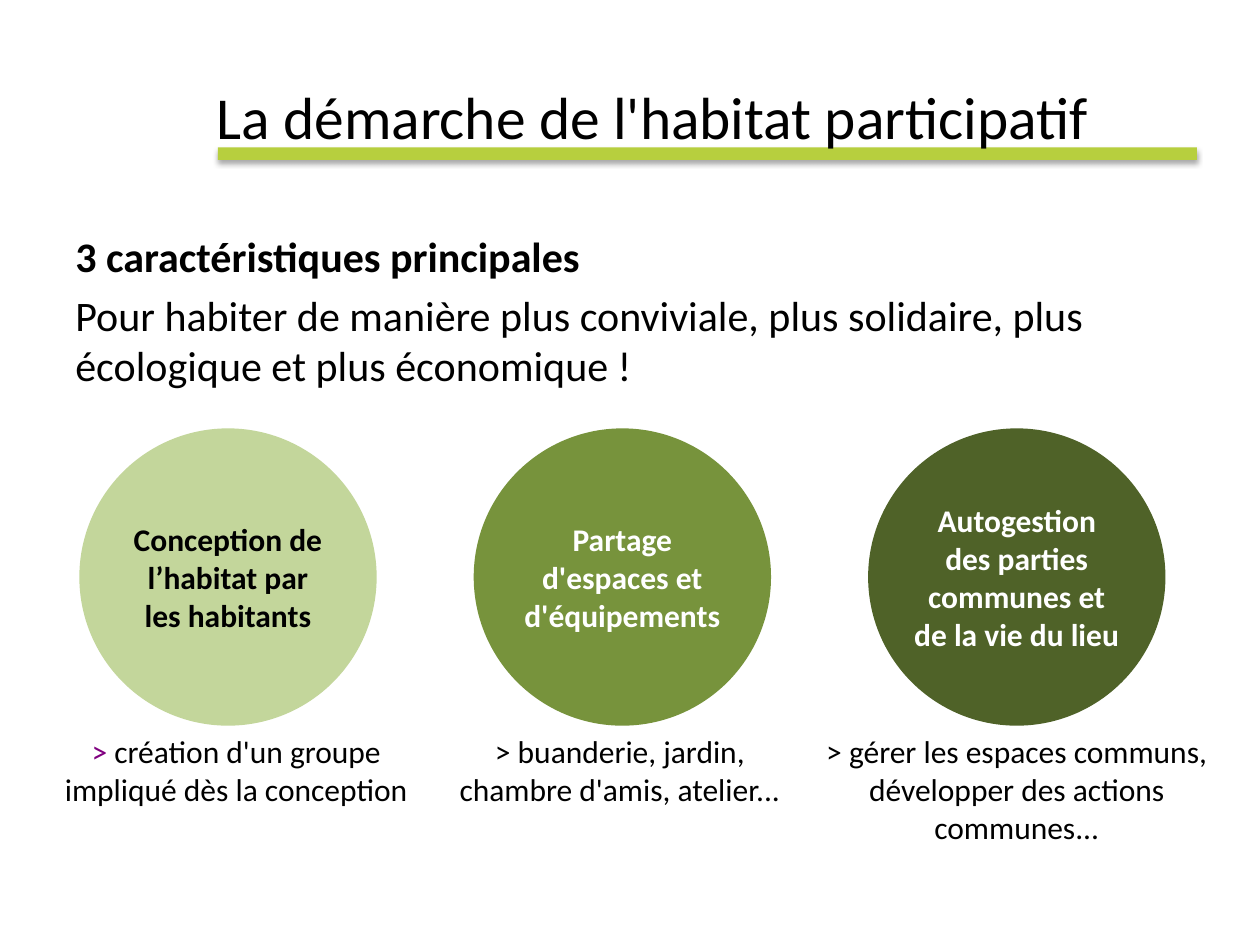
from lxml import etree
from pptx import Presentation
from pptx.dml.color import RGBColor
from pptx.enum.shapes import MSO_SHAPE
from pptx.enum.text import MSO_ANCHOR, PP_ALIGN
from pptx.oxml.ns import qn
from pptx.util import Inches, Pt

FONT = "Calibri"
BLACK, WHITE, PURPLE = "000000", "FFFFFF", "800080"
CIRCLE_LEFT, CIRCLE_TOP, CIRCLE_SIZE, CIRCLE_STEP = 0.63, 3.4, 2.36, 3.13

# circle text, fill, text colour, inset
CIRCLES = [
    ("Conception de l’habitat par les habitants", "C3D69B", BLACK, 0.04),
    ("Partage d'espaces et d'équipements", "77933C", WHITE, 0.04),
    ("Autogestion des parties communes et de la vie du lieu", "4F6228", WHITE, 0),
]
# caption text, colour of its mark, left, width, height
CAPTIONS = [
    ("création d'un groupe impliqué dès la conception", PURPLE, 0.18, 3.39, 0.71),
    ("buanderie, jardin, chambre d'amis, atelier...", BLACK, 3.54, 2.76, 0.71),
    ("gérer les espaces communs, développer des actions communes...", BLACK, 6.34, 3.46, 1.01),
]


def rgb(value):
    return RGBColor.from_string(value)


def style(r, size, color=BLACK, bold=False):
    r.font.name = FONT
    r.font.size = Pt(size)
    r.font.bold = bold
    r.font.color.rgb = rgb(color)


def add_shape(s, kind, left, top, width, height, fill):
    sp = s.shapes.add_shape(kind, Inches(left), Inches(top), Inches(width), Inches(height))
    sp.shadow.inherit = False
    sp.fill.solid()
    sp.fill.fore_color.rgb = rgb(fill)
    sp.line.fill.background()
    return sp


def add_drop_shadow(sp):
    effects = sp._element.spPr.find(qn("a:effectLst"))
    shadow = etree.SubElement(effects, qn("a:outerShdw"), blurRad=str(Pt(3.1)),
                              dist=str(Pt(1.8)), dir="5400000", rotWithShape="0")
    color = etree.SubElement(shadow, qn("a:srgbClr"), val=BLACK)
    etree.SubElement(color, qn("a:alpha"), val="35000")


def add_text(s, left, top, width, height, anchor=MSO_ANCHOR.TOP):
    tf = s.shapes.add_textbox(Inches(left), Inches(top), Inches(width), Inches(height)).text_frame
    tf.word_wrap = True
    tf.vertical_anchor = anchor
    return tf


def add_circle(s, left, text, fill, color, inset):
    sp = add_shape(s, MSO_SHAPE.OVAL, left, CIRCLE_TOP, CIRCLE_SIZE, CIRCLE_SIZE, fill)
    tf = sp.text_frame
    tf.word_wrap = True
    tf.vertical_anchor = MSO_ANCHOR.MIDDLE
    tf.margin_left = tf.margin_right = tf.margin_top = tf.margin_bottom = Inches(inset)
    tf.text = text
    p = tf.paragraphs[0]
    p.alignment = PP_ALIGN.CENTER
    style(p.runs[0], 18, color, bold=True)


def add_caption(s, text, mark_color, left, width, height):
    tf = add_text(s, left, CIRCLE_TOP + CIRCLE_SIZE, width, height)
    p = tf.paragraphs[0]
    p.alignment = PP_ALIGN.CENTER
    for part, color in (("> ", mark_color), (text, BLACK)):
        r = p.add_run()
        r.text = part
        style(r, 18, color)


def main():
    prs = Presentation()
    prs.slide_width, prs.slide_height = Inches(10), Inches(7.5)
    s = prs.slides.add_slide(prs.slide_layouts[6])

    # Title over its green bar
    add_drop_shadow(add_shape(s, MSO_SHAPE.RECTANGLE, 1.73, 1.17, 7.77, 0.1, "B7CF3E"))
    tf = add_text(s, 1.62, 0.47, 8.18, 0.78, MSO_ANCHOR.BOTTOM)
    tf.text = "La démarche de l'habitat participatif"
    style(tf.paragraphs[0].runs[0], 34)

    # Introduction
    tf = add_text(s, 0.5, 1.78, 9, 1.67)
    tf.text = ("3 caractéristiques principales\n"
               "Pour habiter de manière plus conviviale, plus solidaire, "
               "plus écologique et plus économique !")
    heading, intro = tf.paragraphs
    style(heading.runs[0], 24, bold=True)
    style(intro.runs[0], 24)
    intro.space_before = Pt(5)

    # Three characteristics with their captions
    for i, circle in enumerate(CIRCLES):
        add_circle(s, CIRCLE_LEFT + i * CIRCLE_STEP, *circle)
    for caption in CAPTIONS:
        add_caption(s, *caption)

    prs.save("out.pptx")


if __name__ == "__main__":
    main()
